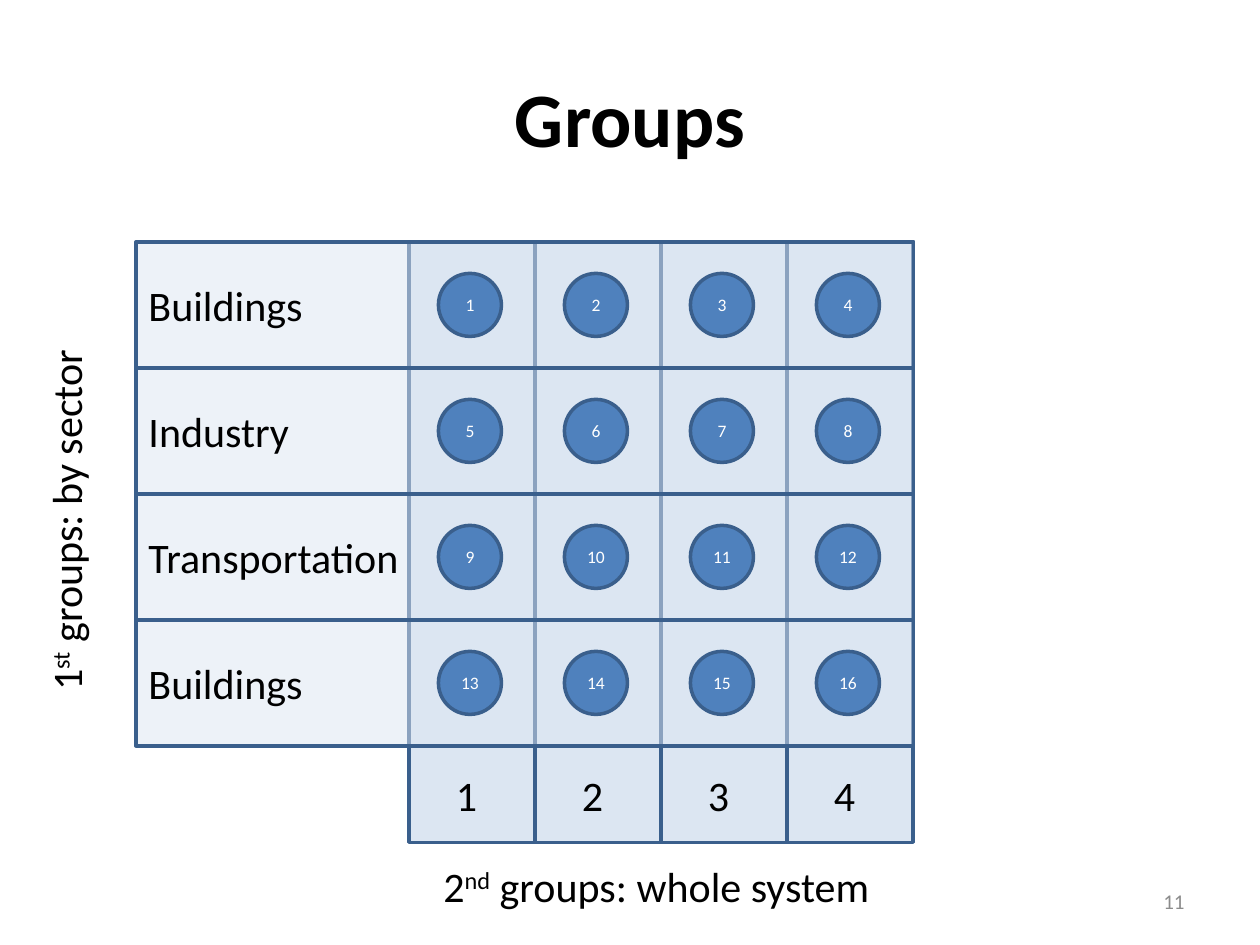
from dataclasses import dataclass

from lxml import etree
from pptx import Presentation
from pptx import util as u
from pptx.dml.color import RGBColor
from pptx.enum import shapes, text
from pptx.oxml import ns

SCALE = 9144


@dataclass(frozen=True)
class Theme:
    font: str = "Calibri"
    pale: str = "DCE6F2"
    blue: str = "4F81BD"
    edge: str = "3A5F8C"
    ink: str = "000000"
    white: str = "FFFFFF"
    gray: str = "8C8C8C"
    head: int = 44
    label: int = 24
    foot: int = 12
    dot: int = 10
    line: int = 2


THEME = Theme()
KINDS = shapes.MSO_SHAPE
ALIGN = text.PP_ALIGN
ANCHOR = text.MSO_ANCHOR
GROW = text.MSO_AUTO_SIZE.SHAPE_TO_FIT_TEXT
FIXED = text.MSO_AUTO_SIZE.NONE


def px(*sizes):
    return [u.Emu(size * SCALE) for size in sizes]


def apply(item, values):
    for name, value in values.items():
        setattr(item, name, value)


def upright(box):
    x, y, w, h = box
    return x + (w - h) // 2, y + (h - w) // 2, h, w


def write(shape, parts, size, color, align=ALIGN.LEFT, bold=False, **frame):
    body = shape.text_frame
    apply(body, {"word_wrap": True, **frame})
    para = body.paragraphs[0]
    para.alignment = align
    for words, lift in parts:
        run = para.add_run()
        run.text = words
        apply(run.font, {"name": THEME.font, "size": u.Pt(size), "bold": bold})
        run.font.color.rgb = RGBColor.from_string(color)
        if lift:
            run.font._element.set("baseline", str(lift * 1000))


def label(slide, box, *parts, turn=False):
    shape = slide.shapes.add_textbox(*px(*(upright(box) if turn else box)))
    shape.rotation = 270 if turn else 0
    write(shape, parts, THEME.label, THEME.ink, auto_size=GROW)


def panel(slide, kind, box, fill, alpha=None, turn=False):
    shape = slide.shapes.add_shape(kind, *px(*(upright(box) if turn else box)))
    shape.rotation = 270 if turn else 0
    shape.shadow.inherit = False
    shape.fill.solid()
    shape.fill.fore_color.rgb = RGBColor.from_string(fill)
    shape.line.color.rgb = RGBColor.from_string(THEME.edge)
    shape.line.width = u.Pt(THEME.line)
    if alpha:
        tint = shape.element.spPr.find(ns.qn("a:solidFill"))[0]
        etree.SubElement(tint, ns.qn("a:alpha"), val=str(alpha * 1000))
    return shape


def title(slide, box):
    shape = slide.shapes.title
    apply(shape, dict(zip(("left", "top", "width", "height"), px(*box))))
    write(shape, [("Groups", 0)], THEME.head, THEME.ink, ALIGN.CENTER, True,
          vertical_anchor=ANCHOR.MIDDLE)


def grid(slide, box, names, count):
    x, y, w, h = box
    step = 100
    first = x + w - count * step
    base = y + len(names) * step
    for col in range(count):
        panel(slide, KINDS.RECTANGLE, (first + col * step, y, step, h),
              THEME.pale, turn=True)
    for row in range(len(names)):
        panel(slide, KINDS.RECTANGLE, (x, y + row * step, w, step),
              THEME.pale, alpha=50)
    for row, name in enumerate(names):
        for col in range(count):
            spot = (first + col * step + 23, y + row * step + 25, 50, 50)
            dot = panel(slide, KINDS.OVAL, spot, THEME.blue)
            write(dot, [(str(row * count + col + 1), 0)], THEME.dot,
                  THEME.white, ALIGN.CENTER, vertical_anchor=ANCHOR.MIDDLE,
                  margin_left=0, margin_right=0)
        label(slide, (x, y + row * step + 25, 225, 50), (name, 0))
    for col in range(count):
        label(slide, (first + col * step + 27, base + 14, 42, 50),
              (str(col + 1), 0))


def axes(slide, side, under):
    label(slide, side, ("1", 0), ("st", 30), (" groups: by sector", 0),
          turn=True)
    label(slide, under, ("2", 0), ("nd", 30), (" groups: whole system", 0))


def number(slide, box):
    shape = slide.shapes.add_textbox(*px(*box))
    write(shape, [("11", 0)], THEME.foot, THEME.gray, ALIGN.RIGHT,
          vertical_anchor=ANCHOR.MIDDLE, auto_size=FIXED)


def main():
    deck = Presentation()
    deck.slide_width, deck.slide_height = px(1000, 750)
    slide = deck.slides.add_slide(deck.slide_layouts[5])
    title(slide, (50, 30, 900, 125))
    names = ["Buildings", "Industry", "Transportation", "Buildings"]
    grid(slide, (108, 192, 617, 477), names, 4)
    axes(slide, (27, 158, 50, 400), (342, 678, 400, 50))
    number(slide, (717, 695, 233, 40))
    deck.save("out.pptx")


if __name__ == "__main__":
    main()
